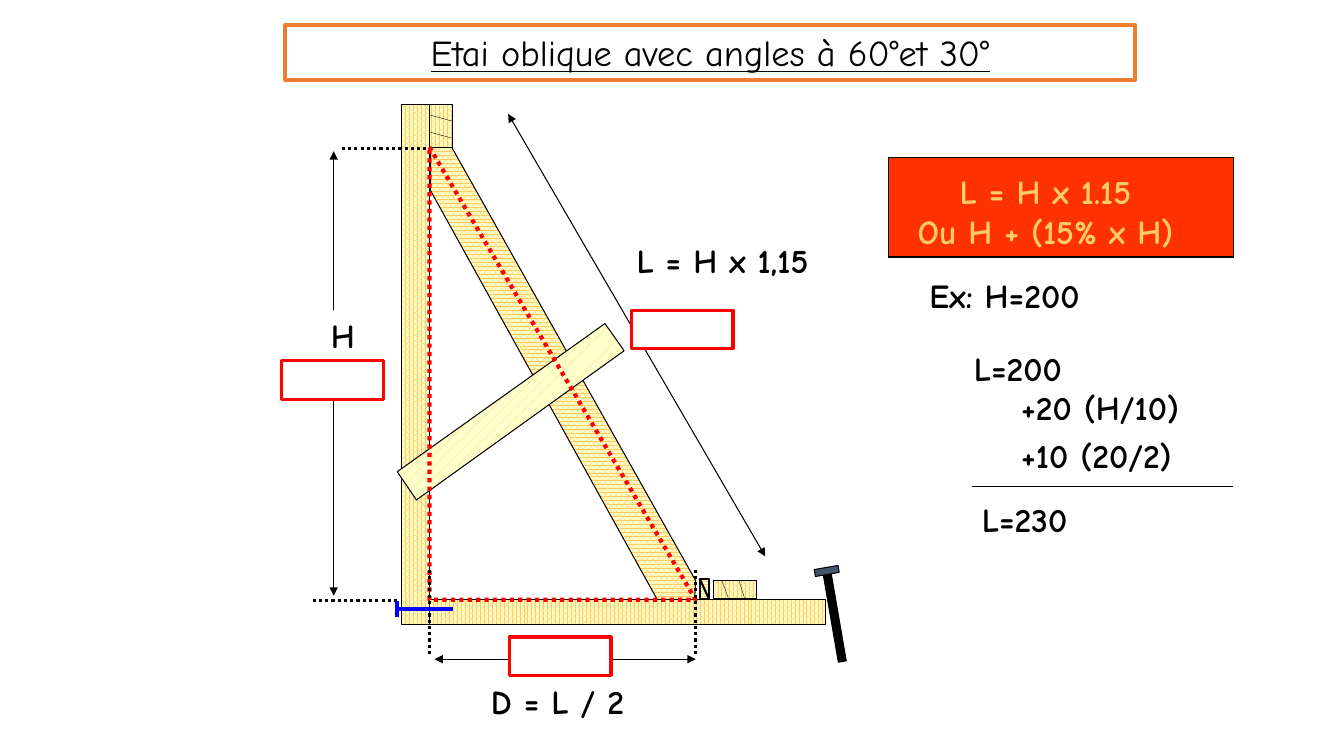
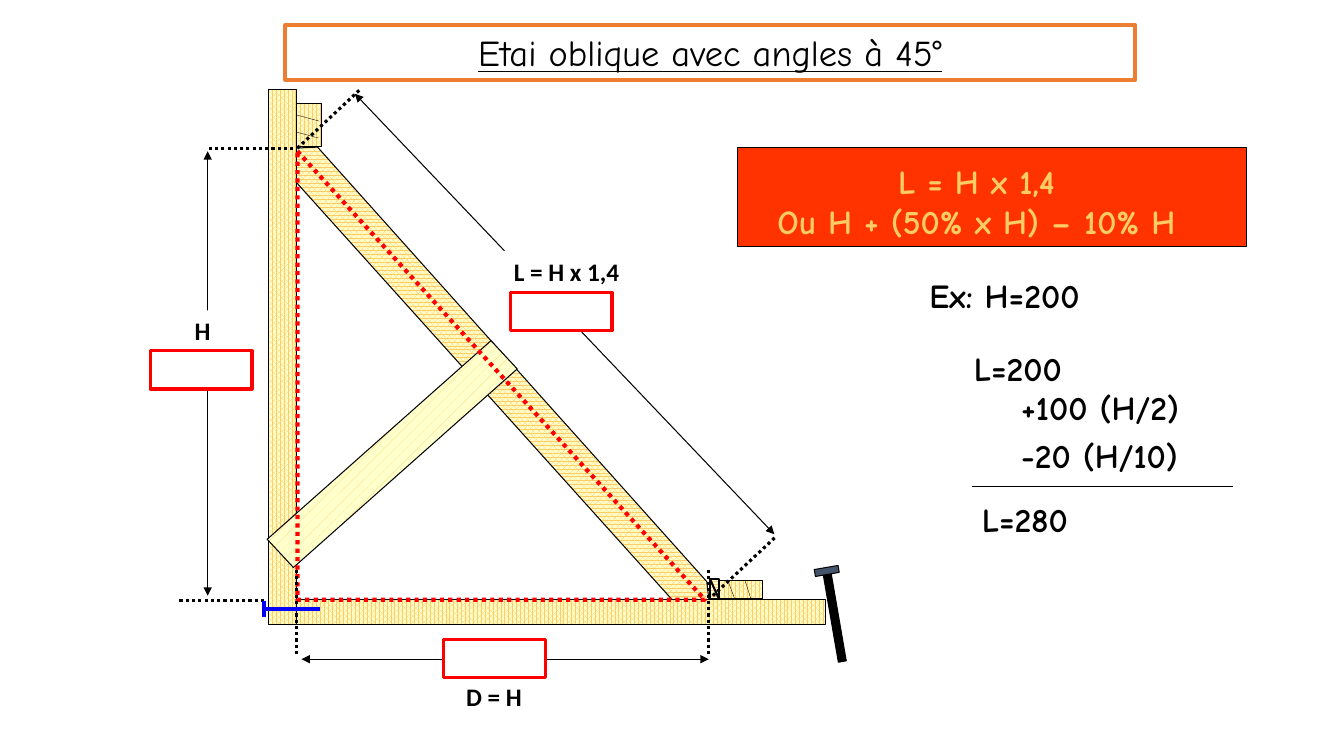
import pptx
import pptx.dml.color
import pptx.enum.dml
import pptx.enum.shapes
import pptx.enum.text
import pptx.oxml.ns
import pptx.util
import lxml.etree

PX = 9144  # EMU per px, 100 px to the inch
RGB = pptx.dml.color.RGBColor
BLACK, WHITE = RGB(0, 0, 0), RGB(255, 255, 255)
RED, BLUE = RGB(255, 0, 0), RGB(0, 0, 255)
ORANGE, PANEL_RED = RGB(0xED, 0x7D, 0x31), RGB(0xFF, 0x33, 0x00)
GOLD, CREAM = RGB(0xFF, 0xCC, 0x66), RGB(0xFF, 0xFF, 0xCC)
PEACH, SLATE = RGB(0xFF, 0xCC, 0x99), RGB(0x44, 0x54, 0x6A)

RECT = pptx.enum.shapes.MSO_SHAPE.RECTANGLE
PATTERN = pptx.enum.dml.MSO_PATTERN
DOTS = pptx.enum.dml.MSO_LINE.ROUND_DOT
ALIGN = pptx.enum.text.PP_ALIGN
ANCHOR = pptx.enum.text.MSO_ANCHOR
FIT = pptx.enum.text.MSO_AUTO_SIZE
HAND = "Comic Neue"

# Pattern fills: pattern, foreground, background
WOOD = (PATTERN.PERCENT_75, GOLD, CREAM)
PLANK = (PATTERN.PERCENT_10, GOLD, CREAM)
WEDGE = (PATTERN.ZIG_ZAG, PEACH, CREAM)


def paint(sp, fill=None, line=BLACK, width=0.75):
    sp.shadow.inherit = False
    if fill is None:
        sp.fill.background()
    elif fill in (WOOD, PLANK, WEDGE):
        sp.fill.patterned()
        sp.fill.pattern, sp.fill.fore_color.rgb, sp.fill.back_color.rgb = fill
    else:
        sp.fill.solid()
        sp.fill.fore_color.rgb = fill
    if line is None:
        sp.line.fill.background()
    else:
        sp.line.color.rgb = line
        sp.line.width = pptx.util.Pt(width)


def text(sp, content, size=24, font=HAND, color=BLACK, bold=True, underline=False,
         align=ALIGN.CENTER, anchor=ANCHOR.TOP, wrap=True, fit=FIT.NONE):
    tf = sp.text_frame
    tf.text = content
    tf.word_wrap, tf.auto_size, tf.vertical_anchor = wrap, fit, anchor
    for p in tf.paragraphs:
        p.alignment = align
        for r in p.runs:
            r.font.name, r.font.size = font, pptx.util.Pt(size)
            r.font.bold, r.font.underline = bold, underline
            r.font.color.rgb = color


# What differs between the two props
PROPS = [
    dict(title="Etai oblique avec angles à 60°et 30°",
         corner=426, top=104, foot=690, apex=(426, 146), toe=690, height_x=331,
         block=424, wedge=694, peg=708,
         strut=[(427, 189), (427, 146), (448, 146), (690, 576), (689, 595), (652, 595)],
         brace=[(600, 321), (394, 468), (413, 496), (619, 348)],
         lines=[(504, 113, 759, 552, BLACK, 0.75, None, True)],
         panel=(881, 156, 342, 99), formula="L = H x 1.15\nOu H + (15% x H)",
         steps=["Ex: H=200", "L=200", "+20 (H/10)", "+10 (20/2)", "L=230"],
         label_font=HAND, label_size=24,
         labels=[("L = H x 1,15", 617, 233, 199, 51), ("H", 327, 308, 11, 50),
                 ("D = L / 2", 463, 671, 180, 51)],
         blanks=[(279, 358), (505, 632), (626, 308)]),
    dict(title="Etai oblique avec angles à 45°",
         corner=294, top=89, foot=703, apex=(295, 150), toe=699, height_x=206,
         block=294, wedge=704, peg=714,
         strut=[(293, 180), (293, 147), (315, 146), (701, 577), (704, 602), (672, 601)],
         brace=[(487, 338), (265, 535), (291, 563), (513, 366)],
         lines=[(768, 530, 352, 93, BLACK, 0.75, None, True),
                (295, 147, 358, 88, BLACK, 2.25, DOTS, False),
                (707, 591, 770, 532, BLACK, 2.25, DOTS, False)],
         panel=(731, 146, 505, 99), formula="L = H x 1,4\nOu H + (50% x H) – 10% H",
         steps=["Ex: H=200", "L=200", "+100 (H/2)", "-20 (H/10)", "L=280"],
         label_font="Calibri", label_size=18,
         labels=[("L = H x 1,4", 499, 249, 126, 40), ("H", 183, 308, 36, 40),
                 ("D = H", 452, 671, 76, 40)],
         blanks=[(149, 348), (440, 634), (506, 290)]),
]
STEP_PLACES = [(912, 268), (956, 340), (1003, 379), (1003, 427), (964, 490)]
GROUND, BASE_END, BASE_DEPTH, POST_WIDTH = 595, 819, 25, 28

prs = pptx.Presentation()
prs.slide_width, prs.slide_height = 1333 * PX, 750 * PX

for prop in PROPS:
    s = prs.slides.add_slide(prs.slide_layouts[5])
    corner, foot, top = prop["corner"], prop["foot"], prop["top"]
    block, wedge, peg = prop["block"], prop["wedge"], prop["peg"]

    # Title
    sp = s.shapes.title
    sp.left, sp.top, sp.width, sp.height = [v * PX for v in (283, 25, 843, 54)]
    paint(sp, line=ORANGE, width=3)
    text(sp, prop["title"], size=26, bold=False, underline=True, anchor=ANCHOR.MIDDLE)

    # Strut, timbers, hammer and formula panel
    outlines = [(prop["strut"], WOOD, BLACK, 0.75, None),
                (prop["brace"], PLANK, BLACK, 0.75, None),
                ([prop["apex"], (prop["toe"], GROUND), (prop["apex"][0], GROUND)],
                 None, RED, 3, DOTS)]
    rects = [((block, top + 14 if top < 100 else top, 25, 42), 0, WOOD, 0.75),
             ((peg, 576, 42, 18), 0, WOOD, 0.75),
             ((corner - POST_WIDTH, top, POST_WIDTH, GROUND + BASE_DEPTH - top), 0, WOOD, 0.75),
             ((corner, GROUND, BASE_END - corner, BASE_DEPTH), 0, WOOD, 0.75),
             ((wedge, 574, 9, 20), 0, WEDGE, 1.5),
             ((824, 569, 8, 88), 350.2, BLACK, 0.75),
             ((808, 563, 24, 7), 350.2, SLATE, 0.75),
             (prop["panel"], 0, PANEL_RED, 0.75)]

    def_order = [outlines[0], *rects, *outlines[1:]]
    for item in def_order:
        if len(item) == 5:
            points, fill, color, width, dash = item
            fb = s.shapes.build_freeform(*points[0], scale=PX)
            fb.add_line_segments(points[1:], close=True)
            sp = fb.convert_to_shape()
            paint(sp, fill, color, width)
            if dash:
                sp.line.dash_style = dash
        else:
            box, angle, fill, width = item
            sp = s.shapes.add_shape(RECT, *[v * PX for v in box])
            sp.rotation = angle
            paint(sp, fill, width=width)
            if box == prop["panel"]:
                text(sp, prop["formula"], color=GOLD, anchor=ANCHOR.MIDDLE, wrap=False)
                sp.text_frame.margin_right = 40 * PX
                sp.text_frame.margin_top = 13 * PX

    # Grain marks, dimension lines, guides and nail
    x = prop["height_x"]
    lines = [
        (corner, 114, corner + 22, 120, BLACK, 0.25, None, False),
        (corner, 131, corner + 22, 137, BLACK, 0.25, None, False),
        (peg + 15, GROUND, peg + 8, 576, BLACK, 0.25, None, False),
        (peg + 31, GROUND, peg + 25, 576, BLACK, 0.25, None, False),
        (wedge + 9, 594, wedge, 574, BLACK, 1.5, None, False),
        (x, 150, x, 591, BLACK, 0.75, None, True),
        (corner + 5, 654, foot, 654, BLACK, 0.75, None, True),
        (corner - 32, 596, corner - 119, 596, BLACK, 2.25, DOTS, False),
        (corner - 3, 147, corner - 90, 147, BLACK, 2.25, DOTS, False),
        (corner, 565, corner, 652, BLACK, 2.25, DOTS, False),
        (foot, 565, foot, 652, BLACK, 2.25, DOTS, False),
        (corner - 32, 604, corner + 23, 604, BLUE, 3, None, False),
        (corner - 32, 596, corner - 32, 612, BLUE, 3, None, False),
        (964, 483, 1223, 483, BLACK, 0.75, None, False),
    ]
    for *ends, color, width, dash, arrows in lines + prop["lines"]:
        cn = s.shapes.add_connector(pptx.enum.shapes.MSO_CONNECTOR.STRAIGHT,
                                    *[v * PX for v in ends])
        cn.line.color.rgb = color
        cn.line.width = pptx.util.Pt(width)
        if dash:
            cn.line.dash_style = dash
        props = cn._element.spPr
        if arrows:
            ln = props.find(pptx.oxml.ns.qn("a:ln"))
            for end in ("a:headEnd", "a:tailEnd"):
                lxml.etree.SubElement(ln, pptx.oxml.ns.qn(end), type="triangle")
        lxml.etree.SubElement(props, pptx.oxml.ns.qn("a:effectLst"))

    # Dimension labels
    for content, *box in prop["labels"]:
        sp = s.shapes.add_shape(RECT, *[v * PX for v in box])
        paint(sp, WHITE, line=None)
        text(sp, content, size=prop["label_size"], font=prop["label_font"],
             wrap=False, fit=FIT.SHAPE_TO_FIT_TEXT)

    # Blank answer boxes
    for left, y in prop["blanks"]:
        sp = s.shapes.add_shape(RECT, left * PX, y * PX, 101 * PX, 38 * PX)
        paint(sp, WHITE, line=RED, width=2.25)

    # Worked example
    for content, (left, y) in zip(prop["steps"], STEP_PLACES):
        sp = s.shapes.add_textbox(left * PX, y * PX, 236 * PX, 50 * PX)
        text(sp, content, align=ALIGN.LEFT)

prs.save("out.pptx")
